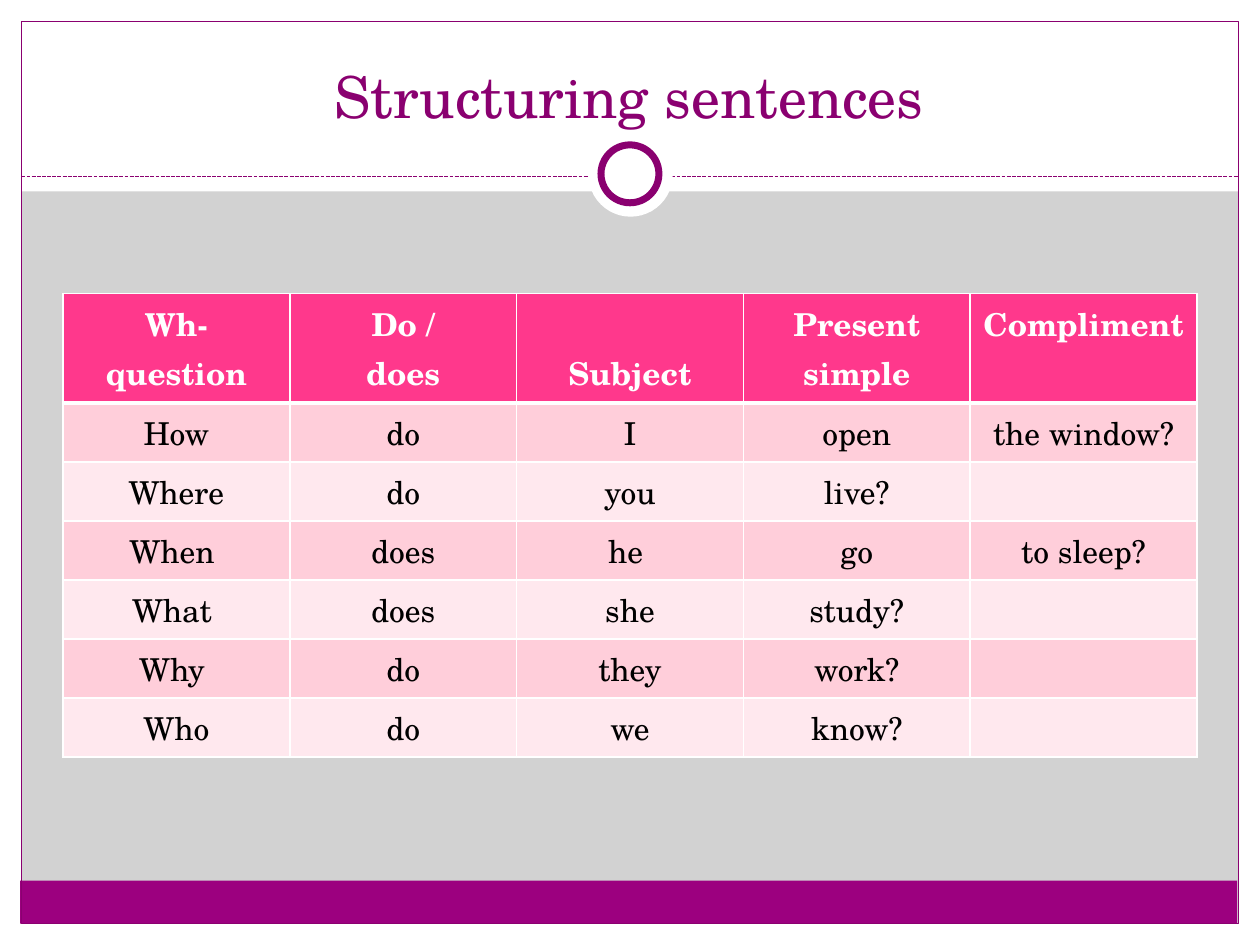
"""Build the slide on structuring sentences, with its table of question words."""
from typing import NamedTuple, Optional

from lxml.etree import SubElement
from pptx import Presentation
from pptx.dml.color import RGBColor
from pptx.enum.dml import MSO_LINE
from pptx.enum.shapes import MSO_CONNECTOR, MSO_SHAPE
from pptx.enum.text import MSO_ANCHOR, PP_ALIGN
from pptx.oxml.ns import qn
from pptx.util import Inches, Pt

FONT = "TeX Gyre Schola"
WHITE, BLACK, GREY = "FFFFFF", "000000", "D2D2D2"
PLUM, PURPLE = "8A0070", "9C007F"
PINK, BANDS = "FF388C", ("FFCEDA", "FFE8EE")
RECT, OVAL = MSO_SHAPE.RECTANGLE, MSO_SHAPE.OVAL
TABLE_HEIGHT, HEADER_HEIGHT = 3.68, 0.87

QUESTIONS = [
    ["Wh- question", "Do /\ndoes", "Subject", "Present simple", "Compliment"],
    ["How", "do", "I", "open", "the window?"],
    ["Where", "do", "you", "live?", ""],
    ["When ", "does", "he ", "go", "to sleep?"],
    ["What ", "does", "she", "study?", ""],
    ["Why ", "do", "they", "work?", ""],
    ["Who", "do", "we", "know?", ""],
]


class Panel(NamedTuple):
    left: float
    top: float
    width: float
    height: float
    fill: Optional[str] = WHITE
    line: Optional[str] = None
    weight: float = 0.75
    outline: MSO_SHAPE = RECT


FRAME = [
    Panel(0, 7.33, 10, 0.17),
    Panel(0, 0, 10, 1.52),
    Panel(0, 0, 0.17, 7.5),
    Panel(9.83, 0, 0.17, 7.5),
    Panel(0.16, 6.99, 9.66, 0.34, PURPLE),
    Panel(0.17, 0.17, 9.66, 7.16, None, PLUM),
]
RING = [
    Panel(4.67, 1.05, 0.67, 0.67, outline=OVAL),
    Panel(4.77, 1.15, 0.46, 0.46, WHITE, PLUM, 4, OVAL),
]


def paint(fill, colour: str) -> None:
    fill.solid()
    fill.fore_color.rgb = RGBColor.from_string(colour)


def draw_panel(slide, panel: Panel) -> None:
    shape = slide.shapes.add_shape(panel.outline, *map(Inches, panel[:4]))
    shape.shadow.inherit = False
    for fill, colour in ((shape.fill, panel.fill), (shape.line.fill, panel.line)):
        if colour:
            paint(fill, colour)
        else:
            fill.background()
    if panel.line:
        shape.line.width = Pt(panel.weight)


def draw_divider(slide, y: float) -> None:
    divider = slide.shapes.add_connector(
        MSO_CONNECTOR.STRAIGHT, Inches(0.17), Inches(y), Inches(9.83), Inches(y))
    paint(divider.line.fill, PLUM)
    divider.line.width = Pt(0.75)
    divider.line.dash_style = MSO_LINE.SQUARE_DOT
    SubElement(divider.element.spPr, qn("a:effectLst"))


def write(frame, text: str, size: float, colour: str, bold: bool = False) -> None:
    frame.word_wrap = True
    frame.text = text
    for paragraph in frame.paragraphs:
        paragraph.alignment = PP_ALIGN.CENTER
        paragraph.font.name = FONT
        paragraph.font.size = Pt(size)
        paragraph.font.bold = bold
        paint(paragraph.font.fill, colour)


def draw_title(slide, text: str) -> None:
    title = slide.shapes.add_textbox(*map(Inches, (0.33, 0.25, 9.33, 0.83)))
    title.text_frame.vertical_anchor = MSO_ANCHOR.BOTTOM
    write(title.text_frame, text, 33, PLUM)


def border(cell, top: float, bottom: float) -> None:
    properties = cell._tc.get_or_add_tcPr()
    for side, weight in (("L", 1), ("R", 1), ("T", top), ("B", bottom)):
        edge = SubElement(properties, qn(f"a:ln{side}"), w=str(Pt(weight)))
        solid = SubElement(edge, qn("a:solidFill"))
        SubElement(solid, qn("a:srgbClr"), val=WHITE)


def draw_table(slide, rows: list[list[str]]) -> None:
    table = slide.shapes.add_table(
        len(rows), len(rows[0]), *map(Inches, (0.5, 2.33, 9, TABLE_HEIGHT))).table
    body_height = (TABLE_HEIGHT - HEADER_HEIGHT) / (len(rows) - 1)
    for r, words in enumerate(rows):
        header = r == 0
        table.rows[r].height = Inches(HEADER_HEIGHT if header else body_height)
        for c, word in enumerate(words):
            cell = table.cell(r, c)
            border(cell, 3 if r == 1 else 1, 3 if header else 1)
            paint(cell.fill, PINK if header else BANDS[(r - 1) % 2])
            write(cell.text_frame, word, 18, WHITE if header else BLACK, header)
    table.cell(0, 2).vertical_anchor = MSO_ANCHOR.BOTTOM


def main() -> None:
    deck = Presentation()
    deck.slide_width, deck.slide_height = Inches(10), Inches(7.5)
    slide = deck.slides.add_slide(deck.slide_layouts[6])
    paint(slide.background.fill, GREY)
    for panel in FRAME:
        draw_panel(slide, panel)
    draw_divider(slide, 1.4)
    for panel in RING:
        draw_panel(slide, panel)
    draw_title(slide, "Structuring sentences")
    draw_table(slide, QUESTIONS)
    deck.save("out.pptx")


if __name__ == "__main__":
    main()
